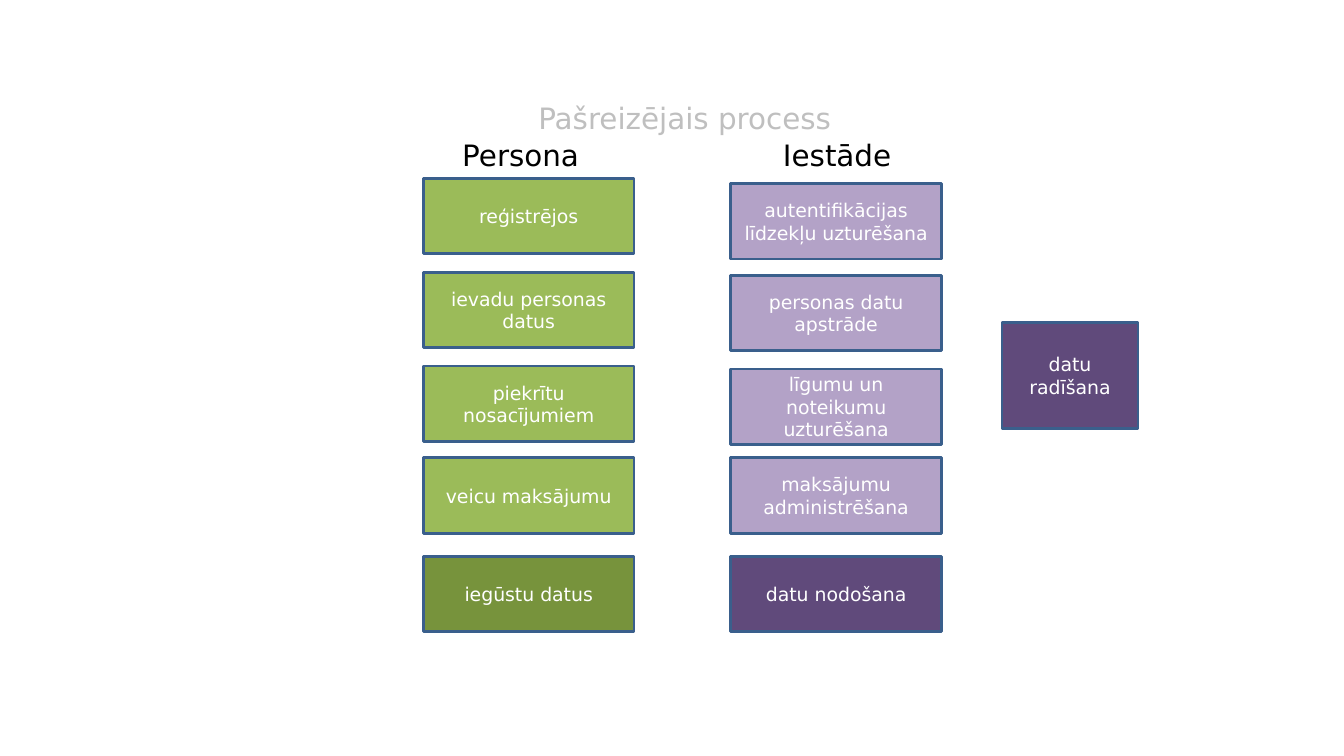
from pptx import Presentation
from pptx.dml.color import RGBColor
from pptx.enum.shapes import MSO_SHAPE
from pptx.enum.text import MSO_ANCHOR, MSO_AUTO_SIZE, PP_ALIGN
from pptx.util import Pt

RECTANGLE = MSO_SHAPE.RECTANGLE
TOP, MIDDLE = MSO_ANCHOR.TOP, MSO_ANCHOR.MIDDLE
CENTER = PP_ALIGN.CENTER
NO_FIT = MSO_AUTO_SIZE.NONE

BLACK = RGBColor(0x00, 0x00, 0x00)
WHITE = RGBColor(0xFF, 0xFF, 0xFF)
GREY = RGBColor(0xBF, 0xBF, 0xBF)
BORDER = RGBColor(0x3A, 0x5F, 0x8C)
GREEN = RGBColor(0x9B, 0xBB, 0x59)
DARK_GREEN = RGBColor(0x77, 0x93, 0x3C)
LILAC = RGBColor(0xB3, 0xA2, 0xC7)
PURPLE = RGBColor(0x60, 0x4A, 0x7B)

STEP_WIDTH, STEP_HEIGHT = 150.5, 54
HEADING_TOP, HEADING_WIDTH, HEADING_HEIGHT = 94.3, 139, 32.4


class ProcessSlide:
    """Style and current slide; all lengths are in points."""

    font = "DejaVu Sans"
    heading_size = 21
    step_size = 13.5

    def __init__(self, presentation):
        self.slide = presentation.slides.add_slide(presentation.slide_layouts[5])

    def set_text(self, shape, text, size, color, anchor):
        frame = shape.text_frame
        frame.text = text
        frame.word_wrap = True
        frame.auto_size = NO_FIT
        frame.vertical_anchor = anchor
        paragraph = frame.paragraphs[0]
        paragraph.alignment = CENTER
        for run in paragraph.runs:
            run.font.name = self.font
            run.font.size = Pt(size)
            run.font.color.rgb = color

    def title(self, text, left, top, width, height):
        title = self.slide.shapes.title
        title.left, title.top = Pt(left), Pt(top)
        title.width, title.height = Pt(width), Pt(height)
        self.set_text(title, text, self.heading_size, GREY, TOP)

    def heading(self, text, left):
        heading = self.slide.shapes.add_textbox(
            Pt(left), Pt(HEADING_TOP), Pt(HEADING_WIDTH), Pt(HEADING_HEIGHT))
        self.set_text(heading, text, self.heading_size, BLACK, TOP)

    def step(self, text, fill, left, top, width=STEP_WIDTH, height=STEP_HEIGHT):
        step = self.slide.shapes.add_shape(
            RECTANGLE, Pt(left), Pt(top), Pt(width), Pt(height))
        step.shadow.inherit = False
        step.fill.solid()
        step.fill.fore_color.rgb = fill
        step.line.color.rgb = BORDER
        step.line.width = Pt(2)
        self.set_text(step, text, self.step_size, WHITE, MIDDLE)


# Columns: heading, heading left, steps left, fill, fill of last step, steps
COLUMNS = [
    ("Persona", 302.4, 302.4, GREEN, DARK_GREEN, [
        ("reģistrējos", 127.4),
        ("ievadu personas datus", 194.4),
        ("piekrītu nosacījumiem", 261.4),
        ("veicu maksājumu", 326.9),
        ("iegūstu datus", 397.4),
    ]),
    ("Iestāde", 528.5, 522, LILAC, PURPLE, [
        ("autentifikācijas līdzekļu uzturēšana", 131),
        ("personas datu apstrāde", 196.6),
        ("līgumu un noteikumu uzturēšana", 263.5),
        ("maksājumu administrēšana", 326.9),
        ("datu nodošana", 397.4),
    ]),
]


def main():
    presentation = Presentation()
    presentation.slide_width, presentation.slide_height = Pt(960), Pt(540)
    process = ProcessSlide(presentation)

    # Title
    process.title("Pašreizējais process", 213.8, 67.7, 550.8, 32.4)

    # The two columns of steps
    for heading, heading_left, left, fill, last_fill, steps in COLUMNS:
        process.heading(heading, heading_left)
        for text, top in steps[:-1]:
            process.step(text, fill, left, top)
        last_text, last_top = steps[-1]
        process.step(last_text, last_fill, left, last_top)

    # Data creation, beside the columns
    process.step("datu radīšana", PURPLE, 715.7, 230.4, 97.2, 75.6)

    presentation.save("out.pptx")


if __name__ == "__main__":
    main()
